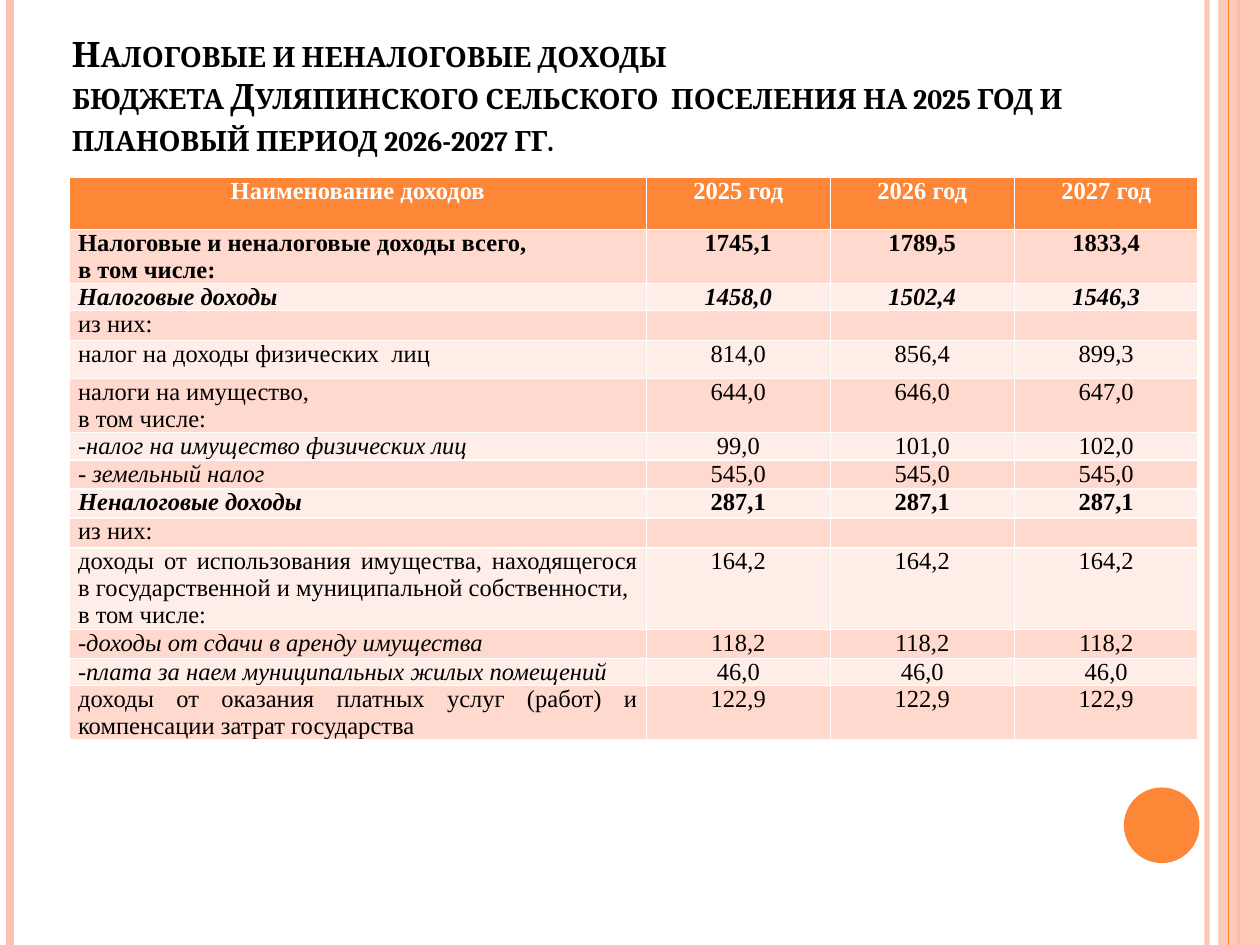
from lxml.etree import SubElement
from pptx import Presentation
from pptx.dml.color import RGBColor
from pptx.enum.shapes import MSO_CONNECTOR, MSO_SHAPE
from pptx.enum.text import MSO_ANCHOR, MSO_AUTO_SIZE, PP_ALIGN
from pptx.oxml.ns import qn
from pptx.util import Inches, Pt

WIDTH, HEIGHT = 10, 7.5
COLORS = {
    "accent": "FE8637",
    "pale": "FEC3AE",
    "band_dark": "FFD9CE",
    "band_light": "FFEDE8",
    "white": "FFFFFF",
    "black": "000000",
}

# Vertical stripes: x, width in points, colour, opacity in percent
LEFT_STRIPES = [
    (9.58, 3, "pale", 93),
    (0.08, 4.5, "pale", 100),
    (9.83, 1.5, "accent", 100),
]

TITLE = (
    "Налоговые и неналоговые доходы \v"
    "бюджета Дуляпинского сельского  поселения на 2025 год и "
    "плановый период 2026-2027 гг."
)

COLUMN_WIDTHS = [4.58, 1.46, 1.46, 1.46]
HEADER = ["Наименование доходов", "2025 год", "2026 год", "2027 год"]
HEADER_HEIGHT = 0.41

# Row height, label, label style, values, value style (b bold, i italic)
ROWS = [
    (0.41, "Налоговые и неналоговые доходы всего, \nв том числе:", "b",
     ["1745,1", "1789,5", "1833,4"], "b"),
    (0.20, "Налоговые доходы ", "bi", ["1458,0", "1502,4", "1546,3"], "bi"),
    (0.23, "из них:", "", ["", "", ""], ""),
    (0.30, "налог на доходы физических  лиц", "", ["814,0", "856,4", "899,3"], ""),
    (0.41, "налоги на имущество,\nв том числе:", "", ["644,0", "646,0", "647,0"], ""),
    (0.22, "-налог на имущество физических лиц", "i", ["99,0", "101,0", "102,0"], ""),
    (0.23, "- земельный налог", "i", ["545,0"] * 3, ""),
    (0.23, "Неналоговые доходы ", "bi", ["287,1"] * 3, "b"),
    (0.23, "из них:", "", ["", "", ""], ""),
    (0.41, "доходы от использования имущества, находящегося в государственной "
           "и муниципальной собственности,\nв том числе:", "", ["164,2"] * 3, ""),
    (0.23, "-доходы от сдачи в аренду имущества  ", "i", ["118,2"] * 3, ""),
    (0.16, "-плата за наем муниципальных жилых помещений ", "i", ["46,0"] * 3, ""),
    (0.41, "доходы от оказания платных услуг (работ) и компенсации затрат "
           "государства", "", ["122,9"] * 3, ""),
]


def set_fill(target, color, opacity=100):
    target.fill.solid()
    target.fill.fore_color.rgb = RGBColor.from_string(COLORS[color])
    if opacity < 100:
        color_element = next(target.fill._xPr.iter(qn("a:srgbClr")))
        SubElement(color_element, qn("a:alpha"), val=str(opacity * 1000))


def write_text(text_frame, text, *, font="Times New Roman", size=14, color="black",
               style="", align=PP_ALIGN.LEFT, small_caps=False):
    text_frame.text = text
    for paragraph in text_frame.paragraphs:
        paragraph.alignment = align
        if not paragraph.runs:
            paragraph._p.get_or_add_endParaRPr().set("sz", str(size * 100))
        for run in paragraph.runs:
            run.font.name = font
            run.font.size = Pt(size)
            run.font.bold = "b" in style
            run.font.italic = "i" in style
            run.font.color.rgb = RGBColor.from_string(COLORS[color])
            if small_caps:
                run.font._element.set("cap", "small")


def add_stripe(slide, x, width, color, opacity=100):
    stripe = slide.shapes.add_connector(
        MSO_CONNECTOR.STRAIGHT, Inches(x), 0, Inches(x), Inches(HEIGHT))
    stripe.line.width = Pt(width)
    set_fill(stripe.line, color, opacity)
    SubElement(stripe._element.spPr, qn("a:effectLst"))


def add_block(slide, kind, left, top, width, height, color, opacity=100):
    block = slide.shapes.add_shape(
        kind, Inches(left), Inches(top), Inches(width), Inches(height))
    block.shadow.inherit = False
    block.line.fill.background()
    set_fill(block, color, opacity)


def add_title(slide):
    title = slide.shapes.title
    title.left, title.top = Inches(0.47), Inches(0.55)
    title.width, title.height = Inches(8.95), Inches(0.76)
    text_frame = title.text_frame
    text_frame.auto_size = MSO_AUTO_SIZE.NONE
    text_frame.vertical_anchor = MSO_ANCHOR.BOTTOM
    write_text(text_frame, TITLE, font="Cambria", size=20, style="b", small_caps=True)


def fill_cell(cell, text, fill, **text_format):
    cell.margin_left = cell.margin_right = Inches(0.07)
    cell.margin_top = cell.margin_bottom = 0
    set_fill(cell, fill)
    write_text(cell.text_frame, text, **text_format)


def add_income_table(slide):
    heights = [HEADER_HEIGHT] + [row[0] for row in ROWS]
    table = slide.shapes.add_table(
        len(heights), len(COLUMN_WIDTHS), Inches(0.55), Inches(1.41),
        Inches(sum(COLUMN_WIDTHS)), Inches(sum(heights))).table
    for column, width in zip(table.columns, COLUMN_WIDTHS):
        column.width = Inches(width)
    for row, height in zip(table.rows, heights):
        row.height = Inches(height)

    for index, text in enumerate(HEADER):
        fill_cell(table.cell(0, index), text, "accent", color="white", style="b",
                  align=PP_ALIGN.CENTER)
    for number, (_, label, label_style, values, value_style) in enumerate(ROWS, 1):
        band = "band_dark" if number % 2 else "band_light"
        fill_cell(table.cell(number, 0), label, band, style=label_style,
                  align=PP_ALIGN.JUSTIFY)
        for index, value in enumerate(values, 1):
            fill_cell(table.cell(number, index), value, band, style=value_style,
                      align=PP_ALIGN.CENTER)


def main():
    presentation = Presentation()
    presentation.slide_width, presentation.slide_height = Inches(WIDTH), Inches(HEIGHT)
    slide = presentation.slides.add_slide(presentation.slide_layouts[5])

    # Side decoration
    for stripe in LEFT_STRIPES:
        add_stripe(slide, *stripe)
    add_block(slide, MSO_SHAPE.RECTANGLE, 9.67, 0, 0.33, HEIGHT, "pale", 87)
    add_stripe(slide, 9.75, 0.75, "accent")
    add_block(slide, MSO_SHAPE.OVAL, 8.92, 6.25, 0.6, 0.6, "accent")

    # Content
    add_title(slide)
    add_income_table(slide)
    presentation.save("out.pptx")


if __name__ == "__main__":
    main()
